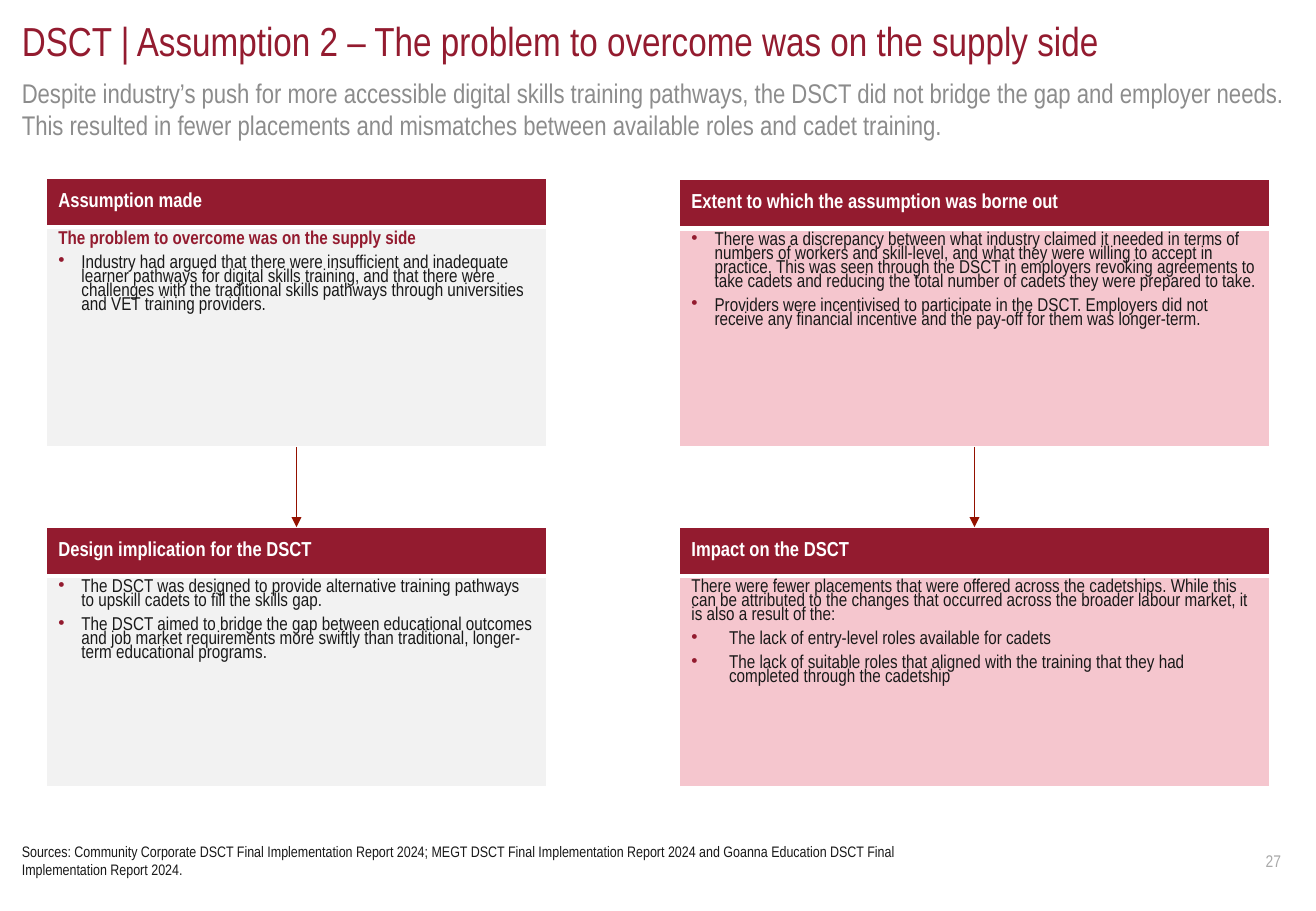
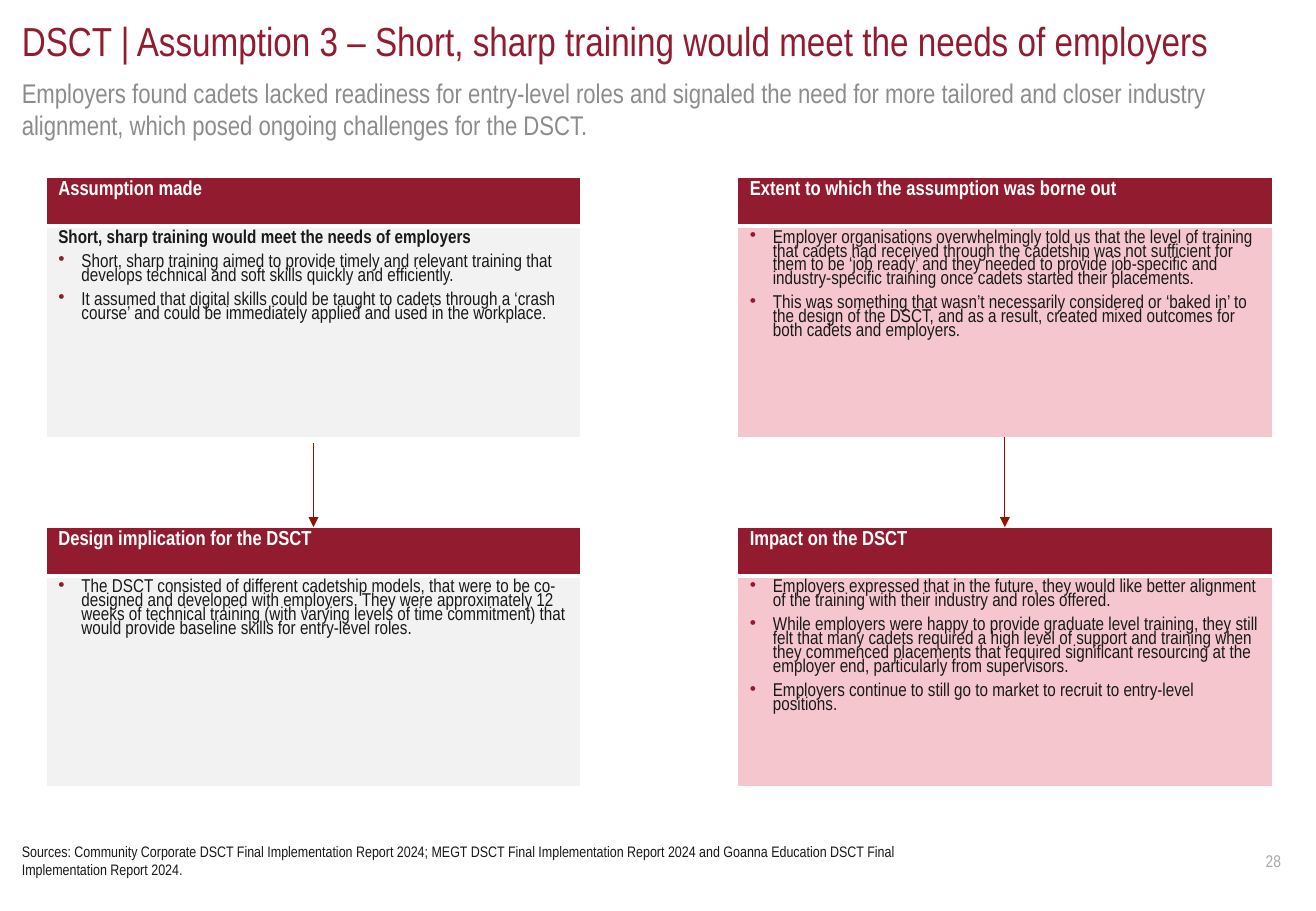
from dataclasses import dataclass

from lxml import etree
from pptx import Presentation
from pptx.dml.color import RGBColor
from pptx.enum.shapes import MSO_CONNECTOR
from pptx.enum.text import MSO_ANCHOR as ANCHOR, MSO_AUTO_SIZE as AUTO, PP_ALIGN as ALIGN
from pptx.oxml.ns import qn
from pptx.util import Inches, Pt


@dataclass(frozen=True)
class Theme:
    font: str = "Arial Narrow"
    maroon: str = "931B2F"
    arrow: str = "941100"
    grey: str = "8C8C8C"
    page: str = "A9A9A9"
    ink: str = "191919"
    white: str = "FFFFFF"
    left_fill: str = "F2F2F2"
    right_fill: str = "F5C6CE"
    title_pt: int = 24
    subtitle_pt: int = 16
    head_pt: int = 12
    body_pt: int = 11
    page_pt: int = 10
    source_pt: int = 9
    gap_pt: int = 6
    spacing: float = 0.8


T = Theme()
MARGIN, TEXT_W = 0.18, 10.47
HEAD_H = 0.4
LOWER_TOP, LOWER_H = 4.34, 2.14
SOURCES = ("Sources: Community Corporate DSCT Final Implementation Report 2024; "
           "MEGT DSCT Final Implementation Report 2024 and Goanna Education DSCT "
           "Final Implementation Report 2024.")

# Paragraph styles: (bullet indent in inches, bold, colour)
LEAD = (0, True, T.maroon)
LEAD_DARK = (0, True, T.ink)
PLAIN = (0, False, T.ink)
BULLET = (0.19, False, T.ink)
WIDE_BULLET = (0.31, False, T.ink)


@dataclass(frozen=True)
class Column:
    x: float
    w: float
    y: float       # top of the upper panel
    h: float       # height of the upper panel
    fill: str
    upper: tuple   # heading, [(style, text), ...]
    lower: tuple
    arrow_gap: float = 0


def add_run(p, text, size, color, bold=False):
    r = p.add_run()
    r.text = text
    r.font.name, r.font.size, r.font.bold = T.font, Pt(size), bold
    r.font.color.rgb = RGBColor.from_string(color)


def add_text(s, box, text, size, color, inset=(0, 0), anchor=ANCHOR.TOP,
             align=ALIGN.LEFT, auto=AUTO.SHAPE_TO_FIT_TEXT):
    tf = s.shapes.add_textbox(*map(Inches, box)).text_frame
    tf.word_wrap = True
    tf.auto_size = auto
    tf.vertical_anchor = anchor
    tf.margin_left = tf.margin_right = Inches(inset[0])
    tf.margin_top = tf.margin_bottom = Inches(inset[1])
    p = tf.paragraphs[0]
    p.alignment = align
    add_run(p, text, size, color)


def set_bullet(p, indent):
    pPr = p._p.get_or_add_pPr()
    pPr.set("marL", str(Inches(indent)))
    pPr.set("indent", str(-Inches(indent)))
    clr = etree.SubElement(pPr, qn("a:buClr"))
    etree.SubElement(clr, qn("a:srgbClr"), val=T.maroon)
    etree.SubElement(pPr, qn("a:buChar"), char="•")


def style_cell(cell, fill, top, bottom):
    # Borders come before the fill in the cell properties
    tcPr = cell._tc.get_or_add_tcPr()
    for side, width in (("L", 1), ("R", 1), ("T", top), ("B", bottom)):
        ln = etree.SubElement(tcPr, qn(f"a:ln{side}"), w=str(Pt(width)))
        solid = etree.SubElement(ln, qn("a:solidFill"))
        etree.SubElement(solid, qn("a:srgbClr"), val=T.white)
    cell.fill.solid()
    cell.fill.fore_color.rgb = RGBColor.from_string(fill)


def add_panel(s, box, fill, content, head_anchor):
    heading, items = content
    table = s.shapes.add_table(2, 1, *map(Inches, box)).table
    table.first_row = table.horz_banding = False
    table.rows[0].height = Inches(HEAD_H)
    table.rows[1].height = Inches(box[3] - HEAD_H)
    head, body = table.cell(0, 0), table.cell(1, 0)
    style_cell(head, T.maroon, 1, 3)
    style_cell(body, fill, 3, 1)

    # Heading row
    head.vertical_anchor = head_anchor
    p = head.text_frame.paragraphs[0]
    p.line_spacing = T.spacing
    add_run(p, heading, T.head_pt, T.white, True)

    # Body row
    tf = body.text_frame
    for i, ((indent, bold, color), text) in enumerate(items):
        p = tf.add_paragraph() if i else tf.paragraphs[0]
        if indent:
            set_bullet(p, indent)
        p.line_spacing = T.spacing
        p.space_after = Pt(T.gap_pt)
        add_run(p, text, T.body_pt, color, bold)


def add_arrow(s, x, y1, y2):
    line = s.shapes.add_connector(MSO_CONNECTOR.STRAIGHT, Inches(x), Inches(y1),
                                  Inches(x), Inches(y2))
    line.line.color.rgb = RGBColor.from_string(T.arrow)
    line.line.width = Pt(0.5)
    etree.SubElement(line.line._get_or_add_ln(), qn("a:tailEnd"), type="triangle")
    etree.SubElement(line._element.spPr, qn("a:effectLst"))


def add_column(s, col, head_anchor):
    add_panel(s, (col.x, col.y, col.w, col.h), col.fill, col.upper, head_anchor)
    add_panel(s, (col.x, LOWER_TOP, col.w, LOWER_H), col.fill, col.lower, head_anchor)
    add_arrow(s, col.x + col.w / 2, col.y + col.h + col.arrow_gap, LOWER_TOP)


def add_frame(s, title, subtitle, number):
    # Title, subtitle, page number and sources
    add_text(s, (MARGIN, 0.63, TEXT_W, 0.54), subtitle, T.subtitle_pt, T.grey)
    add_text(s, (MARGIN, 0.13, TEXT_W, 0.4), title, T.title_pt, T.maroon)
    add_text(s, (10.27, 6.89, 0.37, 0.4), str(number), T.page_pt, T.page,
             (0.1, 0.05), ANCHOR.MIDDLE, ALIGN.RIGHT, AUTO.NONE)
    add_text(s, (MARGIN, 6.88, 7.8, 0.41), SOURCES, T.source_pt, T.ink,
             (0, 0.05), ANCHOR.MIDDLE)


def add_assumption_slide(prs, number, title, subtitle, columns, head_anchor):
    s = prs.slides.add_slide(prs.slide_layouts[6])
    add_frame(s, title, subtitle, number)
    for col in columns:
        add_column(s, col, head_anchor)


ASSUMPTION, EXTENT = "Assumption made", "Extent to which the assumption was borne out"
DESIGN, IMPACT = "Design implication for the DSCT", "Impact on the DSCT"

SUPPLY_SIDE = (
    Column(
        0.38, 4.12, 1.47, 2.21, T.left_fill,
        (ASSUMPTION, [
            (LEAD, "The problem to overcome was on the supply side"),
            (BULLET, "Industry had argued that there were insufficient and inadequate learner "
                     "pathways for digital skills training, and that there were challenges with "
                     "the traditional skills pathways through universities and VET training "
                     "providers."),
        ]),
        (DESIGN, [
            (BULLET, "The DSCT was designed to provide alternative training pathways to upskill "
                     "cadets to fill the skills gap."),
            (BULLET, "The DSCT aimed to bridge the gap between educational outcomes and job "
                     "market requirements more swiftly than traditional, longer-term "
                     "educational programs."),
        ])),
    Column(
        5.59, 4.86, 1.48, 2.2, T.right_fill,
        (EXTENT, [
            (BULLET, "There was a discrepancy between what industry claimed it needed in terms "
                     "of numbers of workers and skill-level, and what they were willing to "
                     "accept in practice. This was seen through the DSCT in employers revoking "
                     "agreements to take cadets and reducing the total number of cadets they "
                     "were prepared to take."),
            (BULLET, "Providers were incentivised to participate in the DSCT. Employers did not "
                     "receive any financial incentive and the pay-off for them was "
                     "longer-term."),
        ]),
        (IMPACT, [
            (PLAIN, "There were fewer placements that were offered across the cadetships. While "
                    "this can be attributed to the changes that occurred across the broader "
                    "labour market, it is also a result of the:"),
            (WIDE_BULLET, "The lack of entry-level roles available for cadets"),
            (WIDE_BULLET, "The lack of suitable roles that aligned with the training that they "
                          "had completed through the cadetship"),
        ])),
)

SHORT_TRAINING = (
    Column(
        0.38, 4.4, 1.46, 2.14, T.left_fill,
        (ASSUMPTION, [
            (LEAD_DARK, "Short, sharp training would meet the needs of employers"),
            (BULLET, "Short, sharp training aimed to provide timely and relevant training that "
                     "develops technical and soft skills quickly and efficiently."),
            (BULLET, "It assumed that digital skills could be taught to cadets through a ‘crash "
                     "course’ and could be immediately applied and used in the workplace."),
        ]),
        (DESIGN, [
            (BULLET, "The DSCT consisted of different cadetship models, that were to be "
                     "co-designed and developed with employers. They were approximately 12 "
                     "weeks of technical training (with varying levels of time commitment) that "
                     "would provide baseline skills for entry-level roles."),
        ]),
        arrow_gap=0.05),
    Column(
        6.07, 4.4, 1.46, 2.14, T.right_fill,
        (EXTENT, [
            (BULLET, "Employer organisations overwhelmingly told us that the level of training "
                     "that cadets had received through the cadetship was not sufficient for "
                     "them to be ‘job ready’ and they needed to provide job-specific and "
                     "industry-specific training once cadets started their placements."),
            (BULLET, "This was something that wasn’t necessarily considered or ‘baked in’ to "
                     "the design of the DSCT, and as a result, created mixed outcomes for both "
                     "cadets and employers."),
        ]),
        (IMPACT, [
            (BULLET, "Employers expressed that in the future, they would like better alignment "
                     "of the training with their industry and roles offered."),
            (BULLET, "While employers were happy to provide graduate level training, they still "
                     "felt that many cadets required a high level of support and training when "
                     "they commenced placements that required significant resourcing at the "
                     "employer end, particularly from supervisors."),
            (BULLET, "Employers continue to still go to market to recruit to entry-level "
                     "positions."),
        ])),
)


def main():
    prs = Presentation()
    prs.slide_width, prs.slide_height = Inches(10.83), Inches(7.5)
    add_assumption_slide(
        prs, 27, "DSCT | Assumption 2 – The problem to overcome was on the supply side",
        "Despite industry’s push for more accessible digital skills training pathways, the DSCT "
        "did not bridge the gap and employer needs. This resulted in fewer placements and "
        "mismatches between available roles and cadet training.",
        SUPPLY_SIDE, ANCHOR.MIDDLE)
    add_assumption_slide(
        prs, 28, "DSCT | Assumption 3 – Short, sharp training would meet the needs of employers",
        "Employers found cadets lacked readiness for entry-level roles and signaled the need for "
        "more tailored and closer industry alignment, which posed ongoing challenges for the "
        "DSCT.",
        SHORT_TRAINING, ANCHOR.TOP)
    prs.save("out.pptx")


if __name__ == "__main__":
    main()
